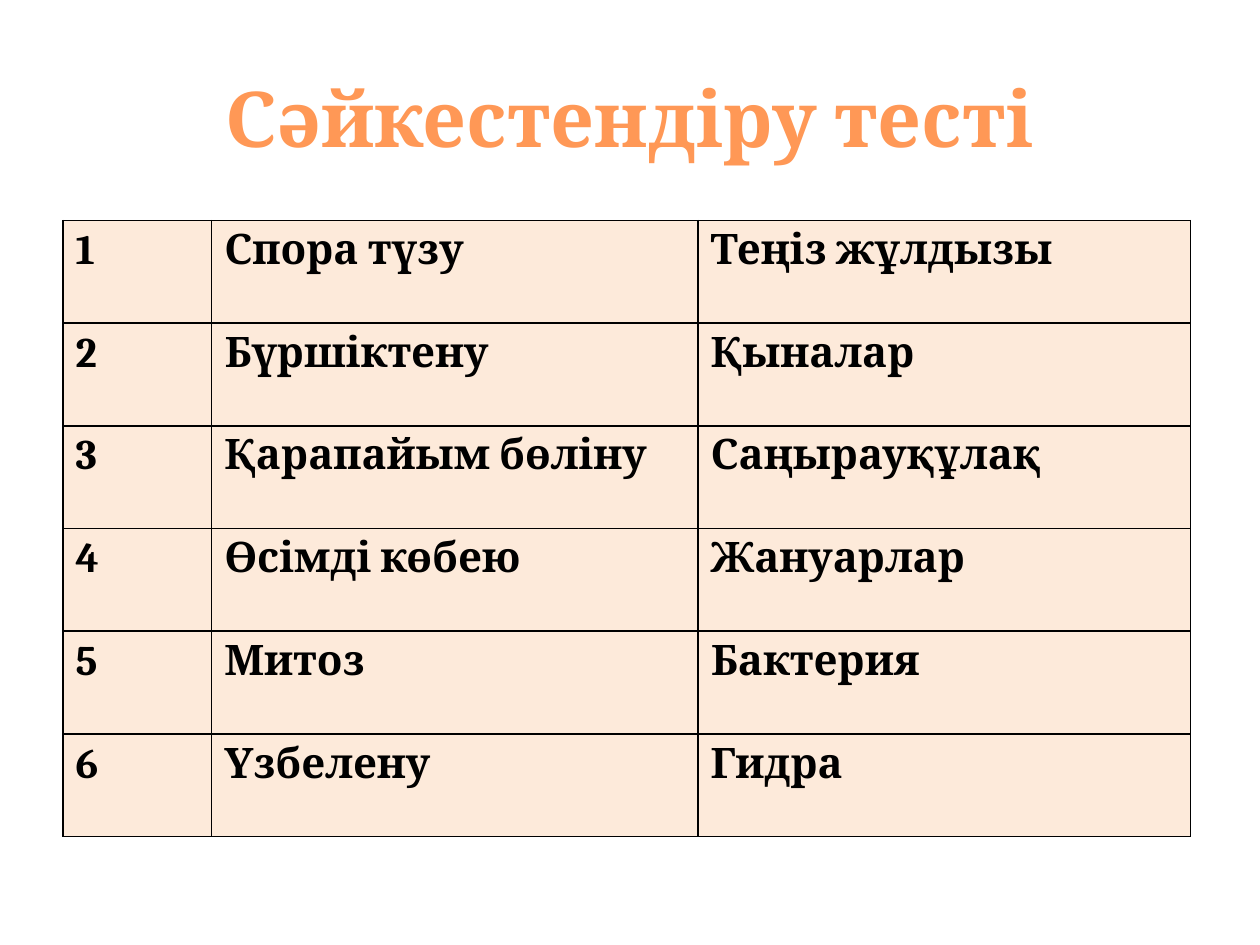
from lxml.etree import SubElement
from pptx import Presentation
from pptx.dml.color import RGBColor
from pptx.enum.text import MSO_ANCHOR, PP_ALIGN
from pptx.oxml.ns import qn
from pptx.util import Inches, Pt

FONT = "Cambria"
BLACK = "000000"
ORANGE = "FF9856"
PEACH = "FDEADA"
COL_WIDTHS = [1.18, 3.86, 3.91]
TABLE_HEIGHT = 4.89
PAIRS = [
    ("Спора түзу", "Теңіз жұлдызы"),
    ("Бүршіктену", "Қыналар"),
    ("Қарапайым бөліну", "Саңырауқұлақ"),
    ("Өсімді көбею", "Жануарлар"),
    ("Митоз", "Бактерия"),
    ("Үзбелену", "Гидра"),
]


def rgb(color):
    return RGBColor.from_string(color)


def add_run(p, text, size, color):
    r = p.add_run()
    r.text = text
    r.font.name = FONT
    r.font.size = Pt(size)
    r.font.bold = True
    r.font.color.rgb = rgb(color)


def add_title(s, text):
    sp = s.shapes.add_textbox(Inches(0.5), Inches(0.3), Inches(9), Inches(1.25))
    tf = sp.text_frame
    tf.word_wrap = True
    tf.vertical_anchor = MSO_ANCHOR.MIDDLE
    p = tf.paragraphs[0]
    p.alignment = PP_ALIGN.CENTER
    add_run(p, text, 44, ORANGE)


def set_borders(cell, color, width):
    tcPr = cell._tc.get_or_add_tcPr()
    for side in ("lnL", "lnR", "lnT", "lnB"):
        ln = SubElement(tcPr, qn(f"a:{side}"), w=str(Pt(width)))
        fill = SubElement(ln, qn("a:solidFill"))
        SubElement(fill, qn("a:srgbClr"), val=color)


def fill_cell(cell, text):
    set_borders(cell, BLACK, 1)
    cell.fill.solid()
    cell.fill.fore_color.rgb = rgb(PEACH)
    add_run(cell.text_frame.paragraphs[0], text, 24, BLACK)


def add_matching_table(s, pairs):
    table = s.shapes.add_table(
        len(pairs), len(COL_WIDTHS), Inches(0.5), Inches(1.75),
        Inches(sum(COL_WIDTHS)), Inches(TABLE_HEIGHT),
    ).table
    table.first_row = False
    table.horz_banding = False
    for column, width in zip(table.columns, COL_WIDTHS):
        column.width = Inches(width)
    for number, (row, pair) in enumerate(zip(table.rows, pairs), 1):
        row.height = Inches(TABLE_HEIGHT / len(pairs))
        for cell, text in zip(row.cells, (str(number), *pair)):
            fill_cell(cell, text)


def main():
    prs = Presentation()
    prs.slide_width = Inches(10)
    prs.slide_height = Inches(7.5)
    s = prs.slides.add_slide(prs.slide_layouts[6])
    add_title(s, "Сәйкестендіру тесті")
    add_matching_table(s, PAIRS)
    prs.save("out.pptx")


if __name__ == "__main__":
    main()
